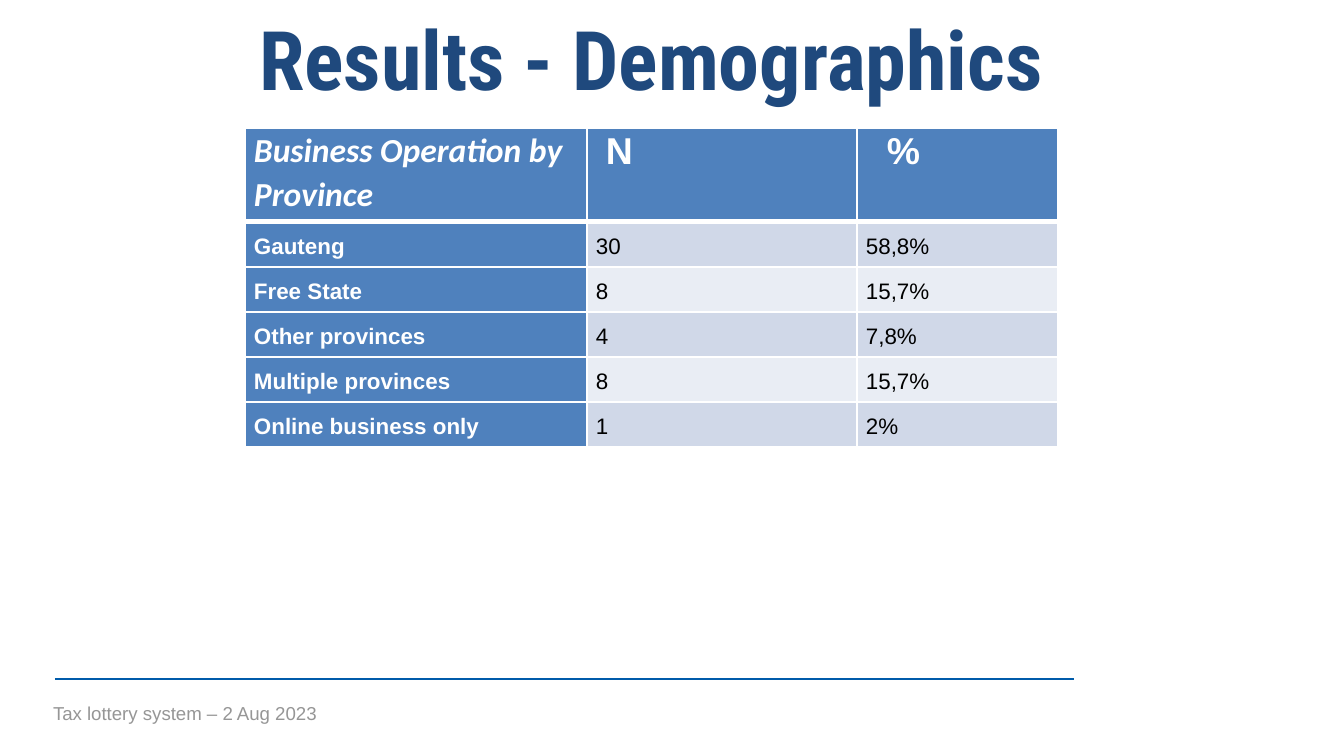
from lxml import etree
from pptx import Presentation
from pptx.dml.color import RGBColor
from pptx.enum.shapes import MSO_CONNECTOR
from pptx.enum.text import PP_ALIGN
from pptx.oxml.ns import qn
from pptx.util import Pt

TITLE = "Results - Demographics"
FOOTER = "Tax lottery system – 2 Aug 2023"
HEADERS = [
    ("Business Operation by Province", "Calibri", 18, 0),
    ("N", "Arial", 20, 10),
    ("%", "Arial", 20, 21),
]
PROVINCES = [
    ("Gauteng", "30", "58,8%"),
    ("Free State", "8", "15,7%"),
    ("Other provinces", "4", "7,8%"),
    ("Multiple provinces", "8", "15,7%"),
    ("Online business only", "1", "2%"),
]
COLUMN_WIDTHS = [342, 270, 201]
HEADER_HEIGHT, ROW_HEIGHT = 94, 45
CELL_MARGIN = 9

NAVY = RGBColor(0x1F, 0x49, 0x7D)
BLUE = RGBColor(0x4F, 0x81, 0xBD)
RULE_BLUE = RGBColor(0x00, 0x5B, 0xAA)
GREY = RGBColor(0x96, 0x96, 0x96)
WHITE = RGBColor(0xFF, 0xFF, 0xFF)
BLACK = RGBColor(0x00, 0x00, 0x00)
BANDS = [RGBColor(0xD0, 0xD8, 0xE8), RGBColor(0xE9, 0xED, 0xF4)]


def px(value):
    return round(value * 914400 / 134.4)


def style_font(para, name, size, color, bold=False, italic=False):
    font = para.font
    font.name, font.size = name, Pt(size)
    font.bold, font.italic = bold, italic
    font.color.rgb = color


def add_text(page, text, bounds, margins):
    box = page.shapes.add_textbox(*map(px, bounds))
    frame = box.text_frame
    frame.word_wrap = True
    frame.margin_left = frame.margin_right = px(margins[0])
    frame.margin_top = frame.margin_bottom = px(margins[1])
    frame.text = text
    return frame.paragraphs[0]


def add_borders(cell, bottom):
    props = cell._tc.get_or_add_tcPr()
    for side, width in (("L", 1), ("R", 1), ("T", 1), ("B", bottom)):
        line = etree.SubElement(props, qn(f"a:ln{side}"), w=str(Pt(width)))
        fill = etree.SubElement(line, qn("a:solidFill"))
        etree.SubElement(fill, qn("a:srgbClr"), val=str(WHITE))


def fill_cell(cell, text, color, spacing, indent=0, bottom=1):
    add_borders(cell, bottom)
    cell.fill.solid()
    cell.fill.fore_color.rgb = color
    cell.margin_left = px(CELL_MARGIN + indent)
    cell.margin_right = px(CELL_MARGIN)
    cell.margin_top = cell.margin_bottom = 0
    cell.text = text
    para = cell.text_frame.paragraphs[0]
    para.line_spacing = spacing
    para.space_after = Pt(8)
    return para


def add_province_table(page):
    height = HEADER_HEIGHT + ROW_HEIGHT * len(PROVINCES)
    table = page.shapes.add_table(
        len(PROVINCES) + 1, len(HEADERS),
        px(245), px(128), px(sum(COLUMN_WIDTHS)), px(height),
    ).table
    table.first_col = True
    for column, width in zip(table.columns, COLUMN_WIDTHS):
        column.width = px(width)
    for index, row in enumerate(table.rows):
        row.height = px(ROW_HEIGHT if index else HEADER_HEIGHT)

    for col, (text, name, size, indent) in enumerate(HEADERS):
        para = fill_cell(table.cell(0, col), text, BLUE, 1.07, indent, 3)
        style_font(para, name, size, WHITE, True, col == 0)

    for row, values in enumerate(PROVINCES):
        for col, text in enumerate(values):
            label = col == 0
            color = BLUE if label else BANDS[row % 2]
            para = fill_cell(table.cell(row + 1, col), text, color, 1.5)
            style_font(para, "Arial", 12, WHITE if label else BLACK, label)


def main():
    deck = Presentation()
    deck.slide_width, deck.slide_height = px(1344), px(756)
    page = deck.slides.add_slide(deck.slide_layouts[6])

    rule = page.shapes.add_connector(
        MSO_CONNECTOR.STRAIGHT, px(55), px(679), px(1074), px(679))
    rule.line.color.rgb = RULE_BLUE
    rule.line.width = Pt(1)
    etree.SubElement(rule._element.spPr, qn("a:effectLst"))

    footer = add_text(page, FOOTER, (40, 695, 1034, 36), (13, 7))
    style_font(footer, "Arial", 10, GREY)

    title = add_text(page, TITLE, (148, 5, 1007, 106), (7, 3))
    title.alignment = PP_ALIGN.CENTER
    style_font(title, "Roboto Condensed", 44, NAVY, True)

    add_province_table(page)
    deck.save("out.pptx")


if __name__ == "__main__":
    main()
